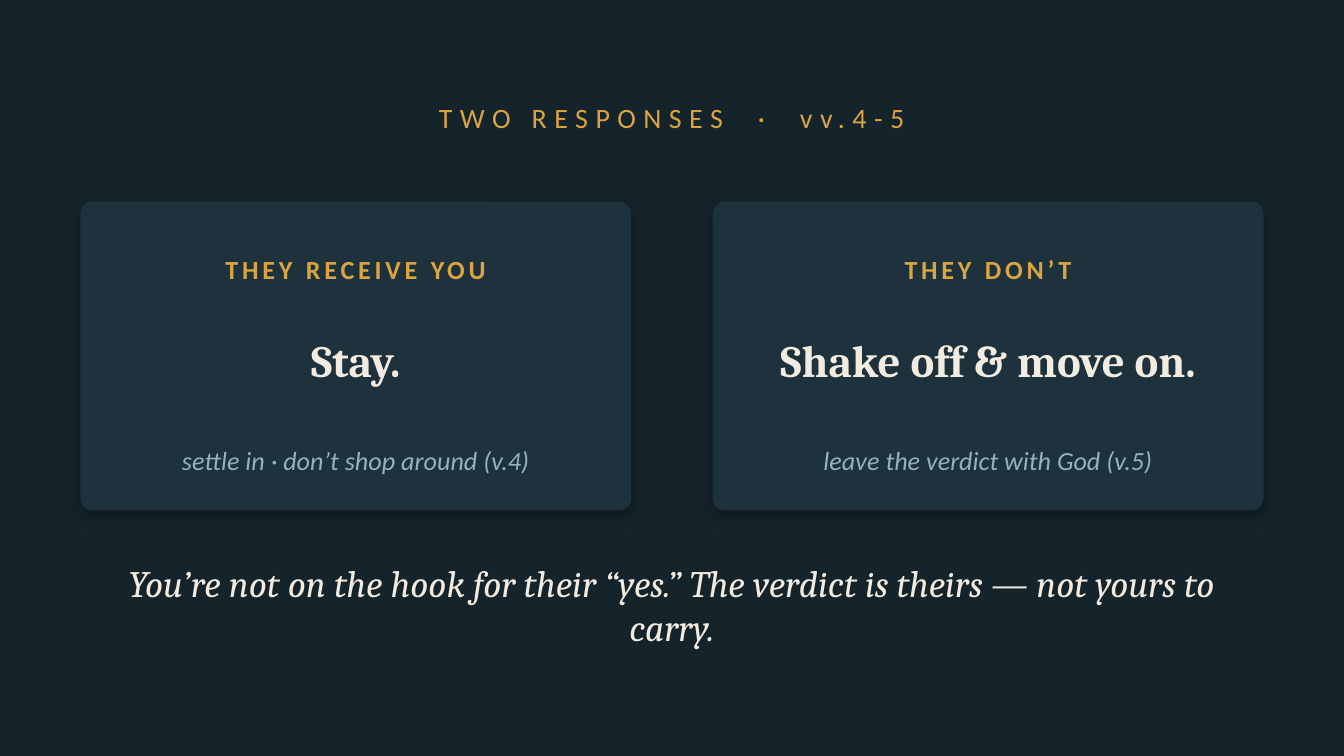
"""Build the slide that sets two responses side by side."""
from lxml.etree import SubElement as Sub
from pptx import Presentation as Deck
from pptx.dml.color import RGBColor as RGB
from pptx.enum.shapes import MSO_SHAPE as Kind
from pptx.enum.text import MSO_ANCHOR as Anchor, PP_ALIGN as Align
from pptx.oxml.ns import qn
from pptx.util import Cm, Pt

NIGHT = RGB(0x15, 0x23, 0x2B)
SLATE = RGB(0x1E, 0x32, 0x3D)
GOLD = RGB(0xD9, 0xA4, 0x41)
CREAM = RGB(0xF2, 0xEC, 0xE0)
MIST = RGB(0x94, 0xB2, 0xC0)
SANS, SERIF = "Calibri", "Cambria"

WIDE, HIGH = 25.4, 14.29
EDGE, CARD = 1.52, 10.41
CARDS = [
    ("THEY RECEIVE YOU", "Stay.", "settle in · don’t shop around (v.4)"),
    ("THEY DON’T", "Shake off & move on.", "leave the verdict with God (v.5)"),
]


def add_text(slide, text, mid, top, wide, high, face, size, tint,
             bold=False, slant=False, track=0):
    box = slide.shapes.add_textbox(Cm(mid - wide / 2), Cm(top), Cm(wide), Cm(high))
    frame = box.text_frame
    frame.word_wrap = True
    frame.vertical_anchor = Anchor.MIDDLE
    para = frame.paragraphs[0]
    para.alignment = Align.CENTER
    run = para.add_run()
    run.text = text
    font = run.font
    font.name, font.size = face, Pt(size)
    font.bold, font.italic = bold, slant
    font.color.rgb = tint
    if track:
        font._element.set("spc", str(track * 100))


def add_shade(shape):
    shape.shadow.inherit = False
    effects = shape._element.spPr.find(qn("a:effectLst"))
    shade = Sub(effects, qn("a:outerShdw"), blurRad=str(Pt(9)), dist=str(Pt(3)),
                dir="5400000", algn="bl", rotWithShape="0")
    tint = Sub(shade, qn("a:srgbClr"), val="000000")
    Sub(tint, qn("a:alpha"), val="30000")


def add_card(slide, left, label, claim, note):
    card = slide.shapes.add_shape(Kind.ROUNDED_RECTANGLE, Cm(left), Cm(3.81),
                                  Cm(CARD), Cm(5.84))
    card.adjustments[0] = 0.04
    card.fill.solid()
    card.fill.fore_color.rgb = SLATE
    card.line.fill.background()
    add_shade(card)
    mid = left + CARD / 2
    add_text(slide, label, mid, 4.45, CARD, 1.27, SANS, 14, GOLD, bold=True, track=2)
    add_text(slide, claim, mid, 5.72, 9.65, 2.16, SERIF, 24, CREAM, bold=True)
    add_text(slide, note, mid, 8, 9.4, 1.4, SANS, 14, MIST, slant=True)


def main():
    deck = Deck()
    deck.slide_width, deck.slide_height = Cm(WIDE), Cm(HIGH)
    slide = deck.slides.add_slide(deck.slide_layouts[6])
    back = slide.background.fill
    back.solid()
    back.fore_color.rgb = NIGHT

    add_text(slide, "TWO RESPONSES  ·  vv.4-5", WIDE / 2, 1.65, 22.86, 1.14,
             SANS, 15, GOLD, track=4)
    for left, words in zip((EDGE, WIDE - EDGE - CARD), CARDS):
        add_card(slide, left, *words)
    add_text(slide, "You’re not on the hook for their “yes.” "
             "The verdict is theirs — not yours to carry.",
             WIDE / 2, 10.67, 21.34, 1.52, SERIF, 20, CREAM, slant=True)
    deck.save("out.pptx")


if __name__ == "__main__":
    main()
